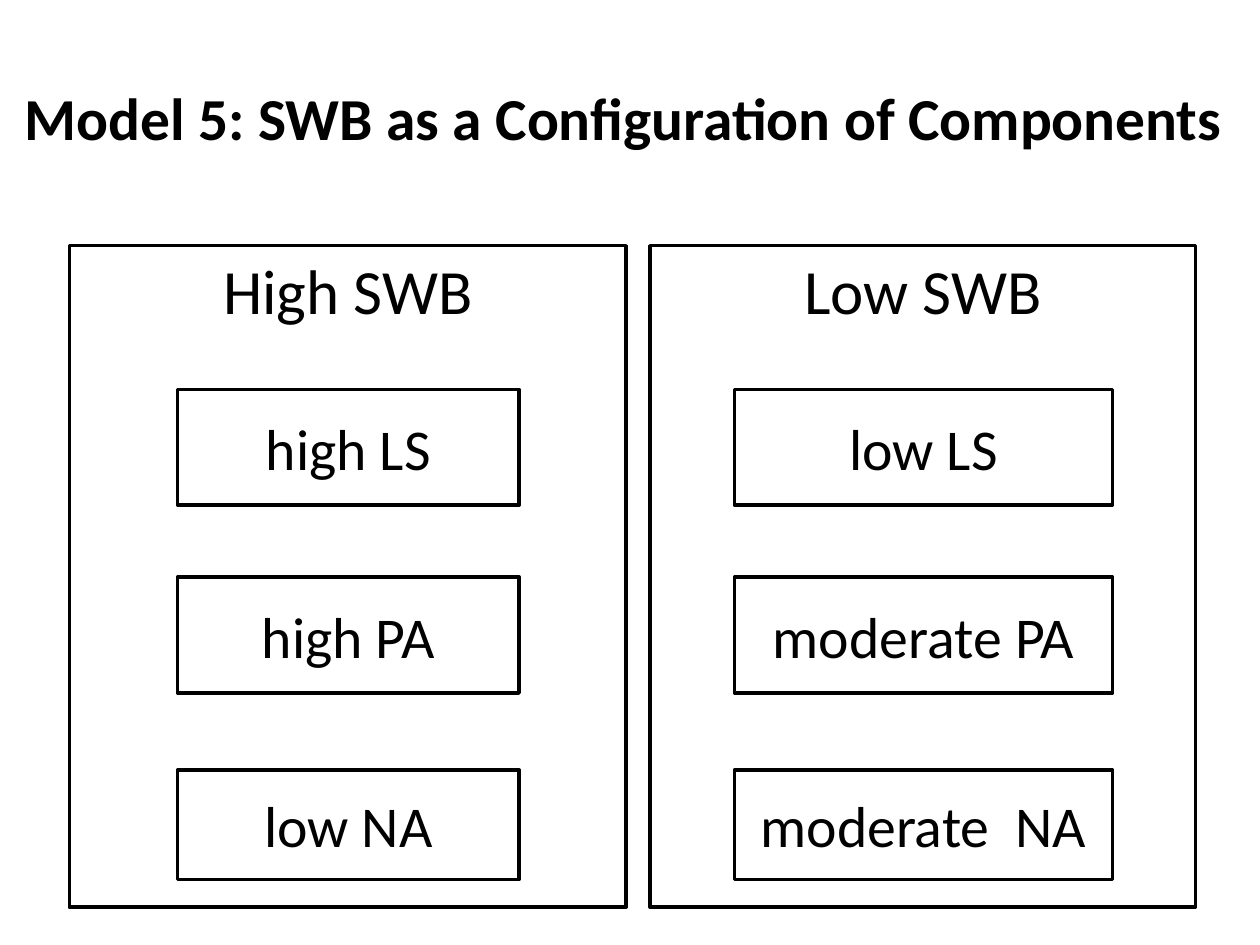
from dataclasses import dataclass

from pptx import Presentation
from pptx.dml.color import RGBColor
from pptx.enum.shapes import MSO_SHAPE
from pptx.enum.text import MSO_ANCHOR, PP_ALIGN
from pptx.slide import Slide
from pptx.text.text import TextFrame
from pptx.util import Inches, Pt

COLORS = {"ink": "000000", "paper": "FFFFFF"}
FONT = "Calibri"
PANEL_TOP, PANEL_HEIGHT = 1.95, 5.25
COMPONENT_ROWS = [(3.09, 0.92), (4.58, 0.92), (6.11, 0.87)]  # top, height


@dataclass(frozen=True)
class Configuration:
    heading: str
    left: float
    width: float
    component_left: float
    component_width: float
    components: tuple[str, str, str]


CONFIGURATIONS = [
    Configuration("High SWB", 0.55, 4.42, 1.41, 2.71, ("high LS", "high PA", "low NA")),
    Configuration("Low SWB", 5.16, 4.33, 5.83, 3, ("low LS", "moderate PA", "moderate  NA")),
]


def color(name: str) -> RGBColor:
    return RGBColor.from_string(COLORS[name])


def write_text(frame: TextFrame, text: str, size: float, anchor: MSO_ANCHOR,
               bold: bool = False) -> None:
    frame.word_wrap = True
    frame.vertical_anchor = anchor
    frame.text = text
    paragraph = frame.paragraphs[0]
    paragraph.alignment = PP_ALIGN.CENTER
    paragraph.font.name = FONT
    paragraph.font.size = Pt(size)
    paragraph.font.bold = bold
    paragraph.font.color.rgb = color("ink")


def add_box(slide: Slide, left: float, top: float, width: float, height: float,
            text: str, size: float, anchor: MSO_ANCHOR) -> None:
    shape = slide.shapes.add_shape(
        MSO_SHAPE.RECTANGLE, Inches(left), Inches(top), Inches(width), Inches(height))
    shape.shadow.inherit = False
    shape.fill.solid()
    shape.fill.fore_color.rgb = color("paper")
    shape.line.color.rgb = color("ink")
    shape.line.width = Pt(2)
    write_text(shape.text_frame, text, size, anchor)


def add_title(slide: Slide, text: str) -> None:
    title = slide.shapes.title
    title.left, title.top = Inches(0), Inches(0.3)
    title.width, title.height = Inches(10), Inches(1.25)
    write_text(title.text_frame, text, 34, MSO_ANCHOR.MIDDLE, bold=True)


def add_configuration(slide: Slide, configuration: Configuration) -> None:
    add_box(slide, configuration.left, PANEL_TOP, configuration.width, PANEL_HEIGHT,
            configuration.heading, 36, MSO_ANCHOR.TOP)
    for (top, height), component in zip(COMPONENT_ROWS, configuration.components):
        add_box(slide, configuration.component_left, top, configuration.component_width,
                height, component, 33, MSO_ANCHOR.MIDDLE)


def main() -> None:
    presentation = Presentation()
    presentation.slide_width, presentation.slide_height = Inches(10), Inches(7.5)
    slide = presentation.slides.add_slide(presentation.slide_layouts[5])
    add_title(slide, "Model 5: SWB as a Configuration of Components ")
    for configuration in CONFIGURATIONS:
        add_configuration(slide, configuration)
    presentation.save("out.pptx")


if __name__ == "__main__":
    main()
